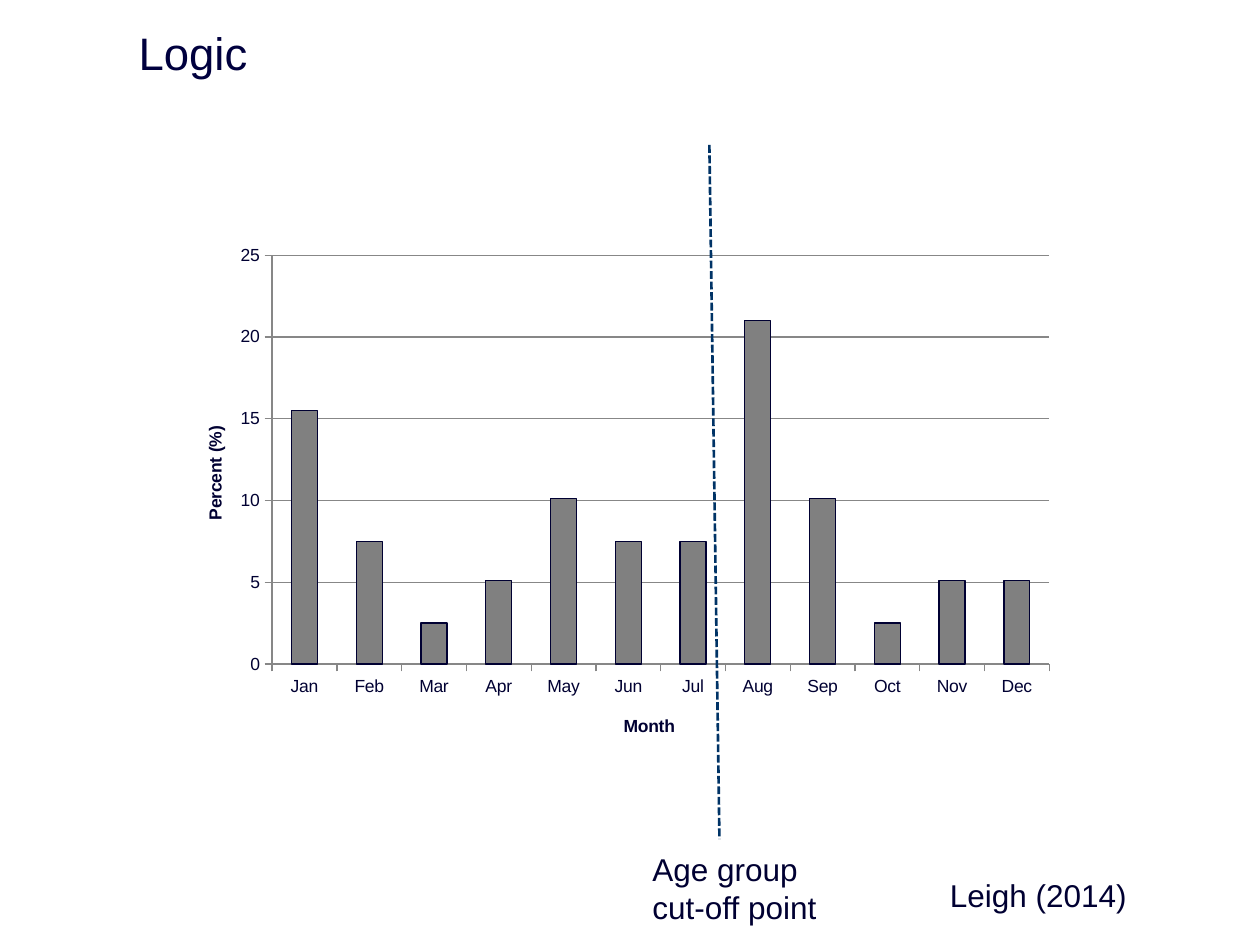
"""Build a slide with a monthly column chart split by an age-group cut-off line."""
from lxml import etree
from pptx import Presentation
from pptx.chart.data import CategoryChartData
from pptx.dml.color import RGBColor
from pptx.enum.chart import XL_CHART_TYPE, XL_TICK_MARK
from pptx.enum.dml import MSO_LINE
from pptx.enum.shapes import MSO_CONNECTOR
from pptx.enum.text import MSO_ANCHOR, MSO_AUTO_SIZE, PP_ALIGN
from pptx.oxml.ns import qn
from pptx.util import Inches, Pt

COLUMNS = XL_CHART_TYPE.COLUMN_CLUSTERED
OUTSIDE = XL_TICK_MARK.OUTSIDE
STRAIGHT = MSO_CONNECTOR.STRAIGHT
DASHES = MSO_LINE.SQUARE_DOT
FIT_SHAPE = MSO_AUTO_SIZE.SHAPE_TO_FIT_TEXT
MIDDLE = MSO_ANCHOR.MIDDLE
LEFT = PP_ALIGN.LEFT

FONT = "Arial"
COLORS = {
    "title": "00003E",
    "text": "000032",
    "bar": "808080",
    "axis": "878787",
    "cutoff": "003366",
}
TITLE = "Logic"
TITLE_BOX = (1, 0.16, 9, 0.51)
LABELS = [
    ("Leigh (2014)", (7.44, 6.9, 2.2, 0.4)),
    ("Age group cut-off point", (5.08, 6.7, 1.81, 0.71)),
]
MONTHLY_PERCENT = {
    "Jan": 15.5, "Feb": 7.5, "Mar": 2.5, "Apr": 5.1,
    "May": 10.1, "Jun": 7.5, "Jul": 7.5, "Aug": 21,
    "Sep": 10.1, "Oct": 2.5, "Nov": 5.1, "Dec": 5.1,
}
CHART_BOX = (1.38, 1.86, 7.09, 4.16)
PLOT_SHARE = {"x": 0.11, "y": 0.04, "w": 0.87, "h": 0.78}
MONTH_SHARE = {"x": 0.5, "y": 0.91}
PERCENT_SHARE = {"x": 0.03, "y": 0.36}
CUTOFF_LINE = (5.63, 1.15, 5.71, 6.66)


def color(name):
    return RGBColor.from_string(COLORS[name])


def inches(values):
    return [Inches(value) for value in values]


def style_font(font, size, color_name, bold=False):
    font.name = FONT
    font.size = Pt(size)
    font.bold = bold
    font.color.rgb = color(color_name)


def style_line(line, color_name, width):
    line.color.rgb = color(color_name)
    line.width = Pt(width)


def set_layout(parent, index, shares):
    for old_layout in parent.findall(qn("c:layout")):
        parent.remove(old_layout)
    layout = etree.Element(qn("c:layout"))
    parent.insert(index, layout)
    manual = etree.SubElement(layout, qn("c:manualLayout"))
    if "w" in shares:
        etree.SubElement(manual, qn("c:layoutTarget"), val="inner")
    for key in ("x", "y"):
        etree.SubElement(manual, qn(f"c:{key}Mode"), val="edge")
    for key, share in shares.items():
        etree.SubElement(manual, qn(f"c:{key}"), val=str(share))


def add_title(slide):
    title = slide.shapes.title
    title.left, title.top, title.width, title.height = inches(TITLE_BOX)
    text_frame = title.text_frame
    text_frame.text = TITLE
    text_frame.vertical_anchor = MIDDLE
    paragraph = text_frame.paragraphs[0]
    paragraph.alignment = LEFT
    style_font(paragraph.runs[0].font, 26, "title")


def add_label(slide, text, box):
    text_frame = slide.shapes.add_textbox(*inches(box)).text_frame
    text_frame.word_wrap = True
    text_frame.auto_size = FIT_SHAPE
    text_frame.text = text
    style_font(text_frame.paragraphs[0].runs[0].font, 18, "text")


def style_axis(axis, title, shares):
    axis.major_tick_mark = OUTSIDE
    style_line(axis.format.line, "axis", 0.75)
    style_font(axis.tick_labels.font, 10, "text")
    text_frame = axis.axis_title.text_frame
    text_frame.text = title
    style_font(text_frame.paragraphs[0].runs[0].font, 10, "text", bold=True)
    set_layout(axis.axis_title._element, 1, shares)


def add_month_chart(slide):
    data = CategoryChartData()
    data.categories = list(MONTHLY_PERCENT)
    data.add_series("Series 1", list(MONTHLY_PERCENT.values()))
    chart = slide.shapes.add_chart(COLUMNS, *inches(CHART_BOX), data).chart
    chart.has_legend = False
    chart.has_title = False
    style_font(chart.font, 10, "text")
    set_layout(chart._chartSpace.find(".//" + qn("c:plotArea")), 0, PLOT_SHARE)

    style_axis(chart.category_axis, "Month", MONTH_SHARE)
    value_axis = chart.value_axis
    style_axis(value_axis, "Percent (%)", PERCENT_SHARE)
    value_axis.minimum_scale = 0
    value_axis.maximum_scale = 25
    value_axis.major_unit = 5
    value_axis.has_major_gridlines = True
    style_line(value_axis.major_gridlines.format.line, "axis", 0.75)

    plot = chart.plots[0]
    plot.gap_width = 150
    plot.vary_by_categories = False
    bars = plot.series[0].format
    bars.fill.solid()
    bars.fill.fore_color.rgb = color("bar")
    style_line(bars.line, "text", 0.75)


def add_cutoff(slide):
    connector = slide.shapes.add_connector(STRAIGHT, *inches(CUTOFF_LINE))
    style_line(connector.line, "cutoff", 1.5)
    connector.line.dash_style = DASHES
    etree.SubElement(connector._element.spPr, qn("a:effectLst"))


def main():
    presentation = Presentation()
    presentation.slide_width, presentation.slide_height = inches((10, 7.5))
    slide = presentation.slides.add_slide(presentation.slide_layouts[5])
    add_title(slide)
    add_month_chart(slide)
    add_cutoff(slide)
    for text, box in LABELS:
        add_label(slide, text, box)
    presentation.save("out.pptx")


if __name__ == "__main__":
    main()
